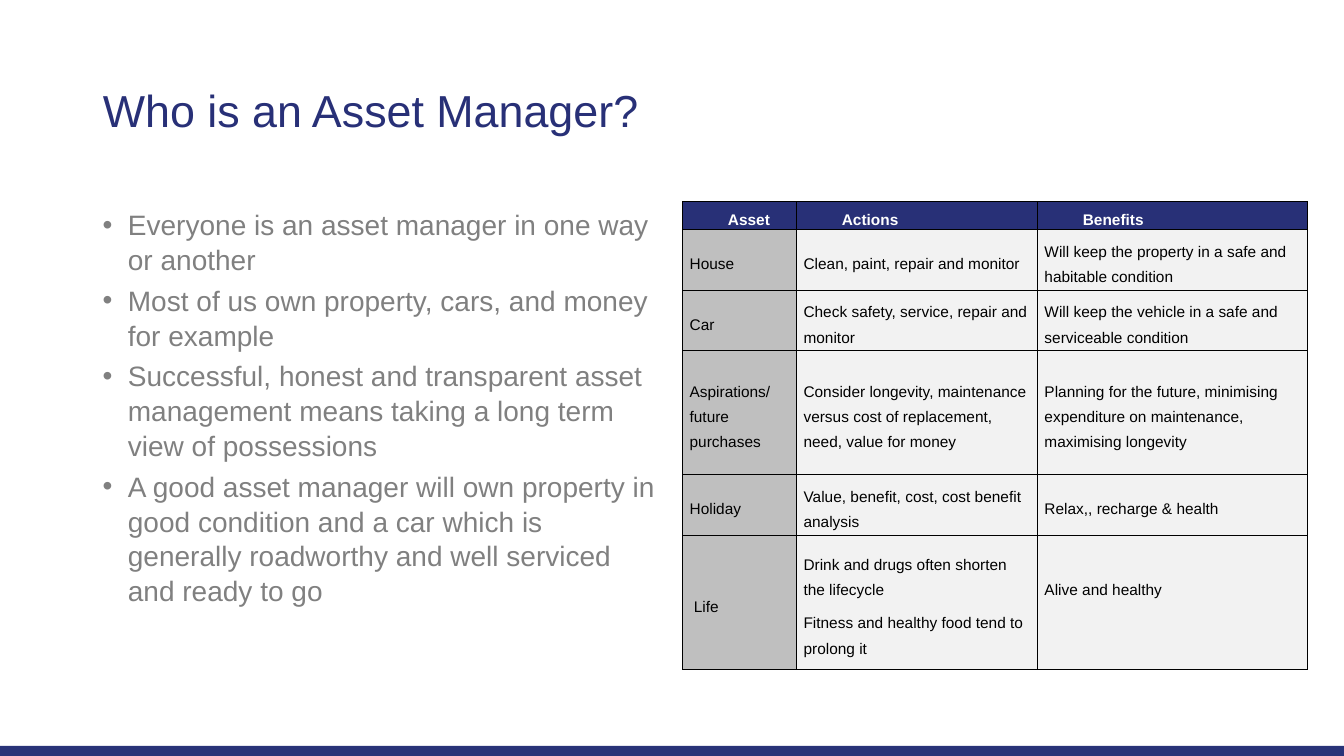
"""Build the slide 'Who is an Asset Manager?' with its bullets and asset table."""
from lxml import etree
from pptx import Presentation
from pptx.dml.color import RGBColor
from pptx.enum.shapes import MSO_SHAPE
from pptx.enum.text import MSO_ANCHOR, MSO_AUTO_SIZE, PP_ALIGN
from pptx.oxml.ns import qn
from pptx.util import Inches, Pt

RECTANGLE = MSO_SHAPE.RECTANGLE
MIDDLE, TOP = MSO_ANCHOR.MIDDLE, MSO_ANCHOR.TOP
LEFT = PP_ALIGN.LEFT
NO_AUTOFIT = MSO_AUTO_SIZE.NONE

FONT = "Arial"
COLORS = {
    "bar": "293378",
    "navy": "283077",
    "white": "FFFFFF",
    "black": "000000",
    "bullet": "808080",
    "asset": "BFBFBF",
    "detail": "F2F2F2",
}

TITLE = "Who is an Asset Manager?"
BULLETS = [
    "Everyone is an asset manager in one way or another",
    "Most of us own property, cars, and money for example",
    "Successful, honest and transparent asset management means taking a long term view of possessions",
    "A good asset manager will own property in good condition and a car which is generally "
    "roadworthy and well serviced and ready to go",
]
ASSETS = [
    ("Asset", "Actions", "Benefits"),
    ("House", "Clean, paint, repair and monitor",
     "Will keep the property in a safe and habitable condition"),
    ("Car", "Check safety, service, repair and monitor",
     "Will keep the vehicle in a safe and serviceable condition"),
    ("Aspirations/ future purchases",
     "Consider longevity, maintenance versus cost of replacement, need, value for money",
     "Planning for the future, minimising expenditure on maintenance, maximising longevity"),
    ("Holiday", "Value, benefit, cost, cost benefit analysis", "Relax,, recharge & health"),
    (" Life",
     "Drink and drugs often shorten the lifecycle\nFitness and healthy food tend to prolong it",
     "Alive and healthy"),
]
COLUMN_WIDTHS = [1.13, 2.39, 2.68]
ROW_HEIGHTS = [0.28, 0.6, 0.6, 1.23, 0.6, 1.33]
RAISED_CELL, RAISED_MARGIN = (5, 2), 0.33


def rgb(name):
    return RGBColor.from_string(COLORS[name])


def set_format(target, values):
    for attribute, value in values.items():
        setattr(target, attribute, value)


def set_font(paragraph, size, color, bold=False):
    set_format(paragraph.font, {"name": FONT, "size": Pt(size), "bold": bold})
    paragraph.font.color.rgb = rgb(color)


def set_indent(paragraph, margin, first_line):
    properties = paragraph._p.get_or_add_pPr()
    properties.set("marL", str(Inches(margin)))
    properties.set("indent", str(Inches(first_line)))
    return properties


def add_borders(cell):
    properties = cell._tc.get_or_add_tcPr()
    for position, side in enumerate(("lnL", "lnR", "lnT", "lnB")):
        border = etree.Element(qn(f"a:{side}"), w=str(Pt(1)))
        fill = etree.SubElement(border, qn("a:solidFill"))
        etree.SubElement(fill, qn("a:srgbClr"), val=COLORS["black"])
        properties.insert(position, border)


def add_title(slide):
    title = slide.shapes.title
    set_format(title, {"left": Inches(0.92), "top": Inches(0.4),
                       "width": Inches(11.5), "height": Inches(1.45)})
    set_format(title.text_frame, {"text": TITLE, "auto_size": NO_AUTOFIT,
                                  "vertical_anchor": MIDDLE, "word_wrap": True})
    heading = title.text_frame.paragraphs[0]
    set_format(heading, {"alignment": LEFT, "line_spacing": 0.9})
    set_font(heading, 32, "navy")


def add_bottom_bar(slide):
    bar = slide.shapes.add_shape(RECTANGLE, 0, Inches(7.4), Inches(13.33), Inches(0.1))
    bar.shadow.inherit = False
    bar.fill.solid()
    bar.fill.fore_color.rgb = rgb("bar")
    bar.line.fill.background()


def add_asset_table(slide):
    table = slide.shapes.add_table(
        len(ASSETS), len(COLUMN_WIDTHS), Inches(6.77), Inches(2),
        Inches(sum(COLUMN_WIDTHS)), Inches(sum(ROW_HEIGHTS))).table
    for column, width in zip(table.columns, COLUMN_WIDTHS):
        column.width = Inches(width)
    for row, height in zip(table.rows, ROW_HEIGHTS):
        row.height = Inches(height)
    for r, entries in enumerate(ASSETS):
        for c, entry in enumerate(entries):
            header = r == 0
            bottom = RAISED_MARGIN if (r, c) == RAISED_CELL else 0
            cell = table.cell(r, c)
            set_format(cell, {"text": entry, "vertical_anchor": MIDDLE,
                              "margin_left": Inches(0.07), "margin_right": Inches(0.07),
                              "margin_top": Inches(0.01), "margin_bottom": Inches(bottom)})
            cell.fill.solid()
            cell.fill.fore_color.rgb = rgb("navy" if header else "detail" if c else "asset")
            add_borders(cell)
            for paragraph in cell.text_frame.paragraphs:
                set_indent(paragraph, 0, 0.38 if header else 0)
                set_format(paragraph, {"line_spacing": Pt(18), "space_after": Pt(6)})
                set_font(paragraph, 11, "white" if header else "black", header)


def add_bullets(slide):
    frame = slide.shapes.add_textbox(
        Inches(0.92), Inches(2), Inches(5.75), Inches(4.76)).text_frame
    set_format(frame, {"word_wrap": True, "vertical_anchor": TOP, "text": "\n".join(BULLETS)})
    for index, paragraph in enumerate(frame.paragraphs):
        properties = set_indent(paragraph, 0.25, -0.25)
        etree.SubElement(properties, qn("a:buFont"), typeface=FONT)
        etree.SubElement(properties, qn("a:buChar"), char="•")
        set_format(paragraph, {"line_spacing": 1.04, "space_before": Pt(4 if index else 0)})
        set_font(paragraph, 20, "bullet")


def main():
    deck = Presentation()
    set_format(deck, {"slide_width": Inches(13.33), "slide_height": Inches(7.5)})
    slide = deck.slides.add_slide(deck.slide_layouts[5])
    add_bottom_bar(slide)
    add_title(slide)
    add_asset_table(slide)
    add_bullets(slide)
    deck.save("out.pptx")


if __name__ == "__main__":
    main()
